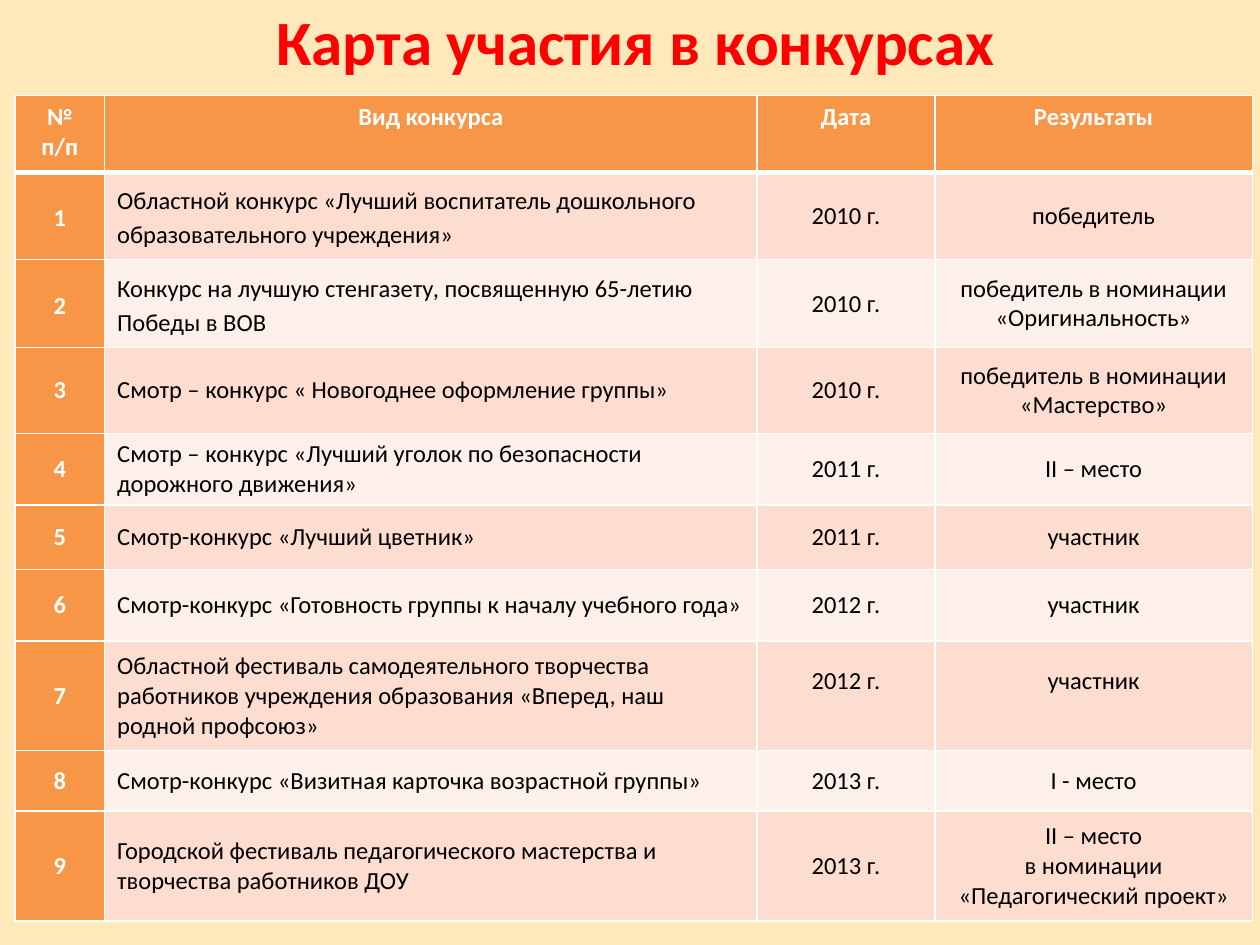
from dataclasses import dataclass

from lxml.etree import SubElement
from pptx import Presentation
from pptx.dml.color import RGBColor
from pptx.enum.text import MSO_ANCHOR as Anchor, MSO_AUTO_SIZE as AutoSize, PP_ALIGN as Align
from pptx.oxml.ns import qn
from pptx.slide import Slide
from pptx.util import Inches, Pt

HEADINGS = ["№ п/п", "Вид конкурса", "Дата", "Результаты"]
CONTESTS = [
    ("Областной конкурс «Лучший воспитатель дошкольного образовательного учреждения»", 2010, "победитель"),
    ("Конкурс на лучшую стенгазету, посвященную 65-летию Победы в ВОВ", 2010,
     "победитель в номинации «Оригинальность»"),
    ("Смотр – конкурс « Новогоднее оформление группы»", 2010, "победитель в номинации «Мастерство»"),
    ("Смотр – конкурс «Лучший уголок по безопасности дорожного движения»", 2011, "II – место"),
    ("Смотр-конкурс «Лучший цветник»", 2011, "участник"),
    ("Смотр-конкурс «Готовность группы к началу учебного года»", 2012, "участник"),
    ("Областной фестиваль самодеятельного творчества работников учреждения образования "
     "«Вперед, наш родной профсоюз»", 2012, "участник"),
    ("Смотр-конкурс «Визитная карточка возрастной группы»", 2013, "I - место"),
    ("Городской фестиваль педагогического мастерства и творчества работников ДОУ", 2013,
     "II – место\nв номинации «Педагогический проект»"),
]
COLUMN_WIDTHS = [0.71, 5.18, 1.41, 2.52]
ROW_HEIGHTS = [0.61, 0.69, 0.7, 0.68, 0.57, 0.51, 0.57, 0.87, 0.48, 0.87]
SPACED_ROWS = (1, 2)
RAISED_ROW = 7


def rgb(value):
    """Turn a hex string into a colour."""
    return RGBColor.from_string(value)


@dataclass
class ContestSlide:
    """Style and current slide."""
    slide: Slide
    font: str = "Calibri"
    accent: str = "F79646"
    bands: tuple = ("FDEFE9", "FCDDCF")
    light: str = "FFFFFF"
    dark: str = "000000"

    def background(self, color):
        """Fill the slide background."""
        fill = self.slide.background.fill
        fill.solid()
        fill.fore_color.rgb = rgb(color)

    def add_text(self, frame, text, size, color, bold, align, spacing=1.0):
        """Add each line of the text as a paragraph."""
        for number, line in enumerate(text.split("\n")):
            paragraph = frame.add_paragraph() if number else frame.paragraphs[0]
            paragraph.alignment = align
            paragraph.line_spacing = spacing
            run = paragraph.add_run()
            run.text = line
            run.font.name = self.font
            run.font.size = Pt(size)
            run.font.bold = bold
            run.font.color.rgb = rgb(color)

    def title(self, text, left, top, width, height, color):
        """Place and format the title."""
        heading = self.slide.shapes.title
        heading.left, heading.top = Inches(left), Inches(top)
        heading.width, heading.height = Inches(width), Inches(height)
        frame = heading.text_frame
        frame.word_wrap = True
        frame.auto_size = AutoSize.SHAPE_TO_FIT_TEXT
        frame.vertical_anchor = Anchor.TOP
        self.add_text(frame, text, 36, color, True, Align.CENTER)

    def borders(self, cell, top, bottom):
        """Draw the four borders of a cell."""
        properties = cell._tc.get_or_add_tcPr()
        sides = {"L": 1, "R": 1, "T": top, "B": bottom}
        for position, (side, points) in enumerate(sides.items()):
            line = SubElement(properties, qn(f"a:ln{side}"), w=str(Pt(points)))
            fill = SubElement(line, qn("a:solidFill"))
            SubElement(fill, qn("a:srgbClr"), val=self.light)
            properties.insert(position, line)

    def cell(self, cell, text, row, column):
        """Fill and border one table cell and add its text."""
        header = row == 0
        strong = header or column == 0
        cell.fill.solid()
        cell.fill.fore_color.rgb = rgb(self.accent if strong else self.bands[row % 2])
        cell.vertical_anchor = Anchor.TOP if header else Anchor.MIDDLE
        if row == RAISED_ROW and column > 1:
            cell.margin_bottom = Inches(0.29)
        align = Align.LEFT if column == 1 and not header else Align.CENTER
        spacing = 1.15 if row in SPACED_ROWS and column < 2 else 1.0
        self.add_text(cell.text_frame, text, 14, self.light if strong else self.dark, strong, align, spacing)
        self.borders(cell, 3 if row == 1 else 1, 3 if header else 1)

    def table(self, rows, left, top, widths, heights):
        """Add the table with its columns, rows and cells."""
        table = self.slide.shapes.add_table(
            len(rows), len(widths), Inches(left), Inches(top),
            Inches(sum(widths)), Inches(sum(heights))).table
        for column, width in zip(table.columns, widths):
            column.width = Inches(width)
        for row, height in zip(table.rows, heights):
            row.height = Inches(height)
        for row, texts in enumerate(rows):
            for column, text in enumerate(texts):
                self.cell(table.cell(row, column), text, row, column)


def main():
    """Build and save the contest slide."""
    deck = Presentation()
    deck.slide_width, deck.slide_height = Inches(10), Inches(7.5)
    page = ContestSlide(deck.slides.add_slide(deck.slide_layouts[5]))
    page.background("FFE8BA")
    page.title("Карта участия в конкурсах", 0.28, -0.03, 9.53, 0.71, "FF0000")
    rows = [HEADINGS] + [
        [str(number), contest, f"{year} г.", result]
        for number, (contest, year, result) in enumerate(CONTESTS, 1)]
    page.table(rows, 0.12, 0.76, COLUMN_WIDTHS, ROW_HEIGHTS)
    deck.save("out.pptx")


if __name__ == "__main__":
    main()
